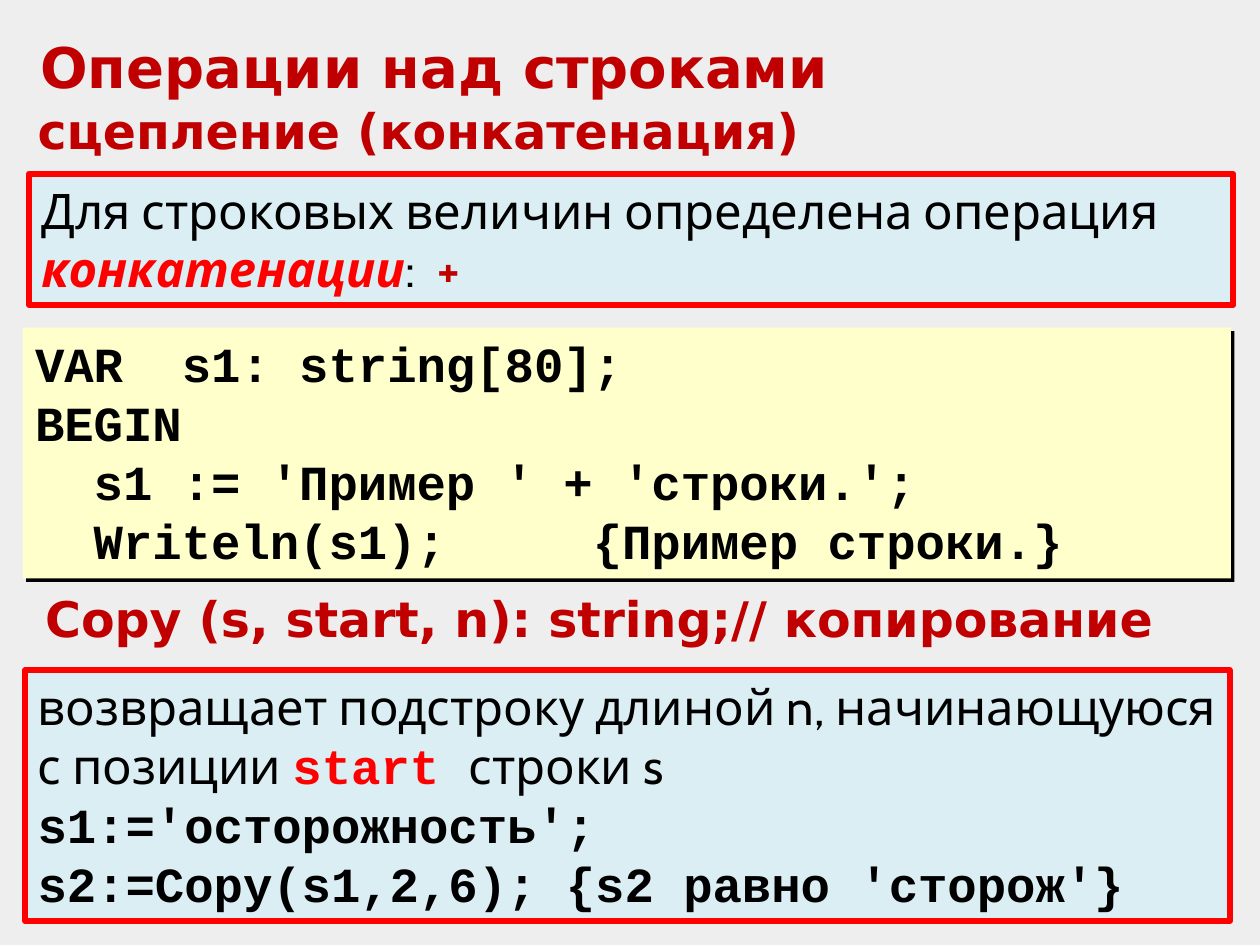
from lxml import etree
from pptx import Presentation
from pptx.dml.color import RGBColor
from pptx.enum.shapes import MSO_SHAPE
from pptx.enum.text import MSO_ANCHOR, PP_ALIGN
from pptx.oxml.ns import qn
from pptx.util import Inches, Pt

RECT = MSO_SHAPE.RECTANGLE
TOP, LEFT = MSO_ANCHOR.TOP, PP_ALIGN.LEFT
BACKGROUND, BLACK, RED, DARK_RED = "EEEEEE", "000000", "FF0000", "C00000"
YELLOW, PALE_BLUE = "FFFFCC", "DBEEF4"
BODY, CODE, HEAD = "Cabin", "Courier New", "DejaVu Sans"

# (left, top, width, height), text, size
HEADINGS = [
    ((0.22, 0.21, 9.28, 0.64), "Операции над строками", 32),
    ((0.2, 0.75, 9.28, 0.57), "сцепление (конкатенация)", 28),
    ((0.26, 4.62, 9.51, 0.57), "Copy (s, start, n): string;// копирование", 28),
]
CODE_BOX = (0.18, 2.6, 9.59, 1.99)
CODE_LINES = [
    "VAR  s1: string[80];",
    "BEGIN",
    "  s1 := 'Пример ' + 'строки.';",
    "  Writeln(s1);     {Пример строки.}",
]
# Each paragraph is a list of (text, format) runs
NOTES = [
    ((0.23, 1.38, 9.56, 1.04), [
        [("Для строковых величин определена операция ", {}),
         ("конкатенации", dict(color=RED, bold=True, italic=True)),
         (":  ", {}),
         ("+", dict(color=DARK_RED, bold=True))],
    ]),
    ((0.2, 5.32, 9.56, 1.99), [
        [("возвращает подстроку длиной n, начинающуюся с позиции ", {}),
         ("start ", dict(font=CODE, color=RED, bold=True)),
         ("строки s", {})],
        [("s1:='осторожность';", dict(font=CODE, bold=True))],
        [("s2:=Copy(s1,2,6); {s2 равно 'сторож'}", dict(font=CODE, bold=True))],
    ]),
]


def rgb(color):
    return RGBColor.from_string(color)


def add_run(p, text, font=BODY, size=28, color=BLACK, bold=False, italic=False):
    r = p.add_run()
    r.text = text
    r.font.name, r.font.size = font, Pt(size)
    r.font.bold, r.font.italic = bold, italic
    r.font.color.rgb = rgb(color)


def write(sp, paragraphs):
    tf = sp.text_frame
    tf.word_wrap = True
    tf.vertical_anchor = TOP
    for i, runs in enumerate(paragraphs):
        p = tf.paragraphs[0] if i == 0 else tf.add_paragraph()
        p.alignment = LEFT
        for text, style in runs:
            add_run(p, text, **style)


def add_box(s, at, fill, paragraphs, line=None):
    sp = s.shapes.add_shape(RECT, *map(Inches, at))
    sp.shadow.inherit = False
    sp.fill.solid()
    sp.fill.fore_color.rgb = rgb(fill)
    if line:
        sp.line.color.rgb = rgb(line)
        sp.line.width = Pt(3.5)
    else:
        sp.line.fill.background()
    write(sp, paragraphs)
    return sp


def add_hard_shadow(sp, color, distance, angle):
    effects = sp.element.spPr.find(qn("a:effectLst"))
    shadow = etree.SubElement(effects, qn("a:outerShdw"), dist=str(Pt(distance)),
                              dir=str(angle * 60000), algn="ctr", rotWithShape="0")
    etree.SubElement(shadow, qn("a:srgbClr"), val=color)


prs = Presentation()
prs.slide_width, prs.slide_height = Inches(10), Inches(7.5)
s = prs.slides.add_slide(prs.slide_layouts[6])
s.background.fill.solid()
s.background.fill.fore_color.rgb = rgb(BACKGROUND)

for at, text, size in HEADINGS:
    style = dict(font=HEAD, size=size, color=DARK_RED, bold=True)
    write(s.shapes.add_textbox(*map(Inches, at)), [[(text, style)]])

code = [[(text, dict(font=CODE, bold=True))] for text in CODE_LINES]
add_hard_shadow(add_box(s, CODE_BOX, YELLOW, code), BLACK, 2.8, 45)

for at, paragraphs in NOTES:
    add_box(s, at, PALE_BLUE, paragraphs, line=RED)

prs.save("out.pptx")
